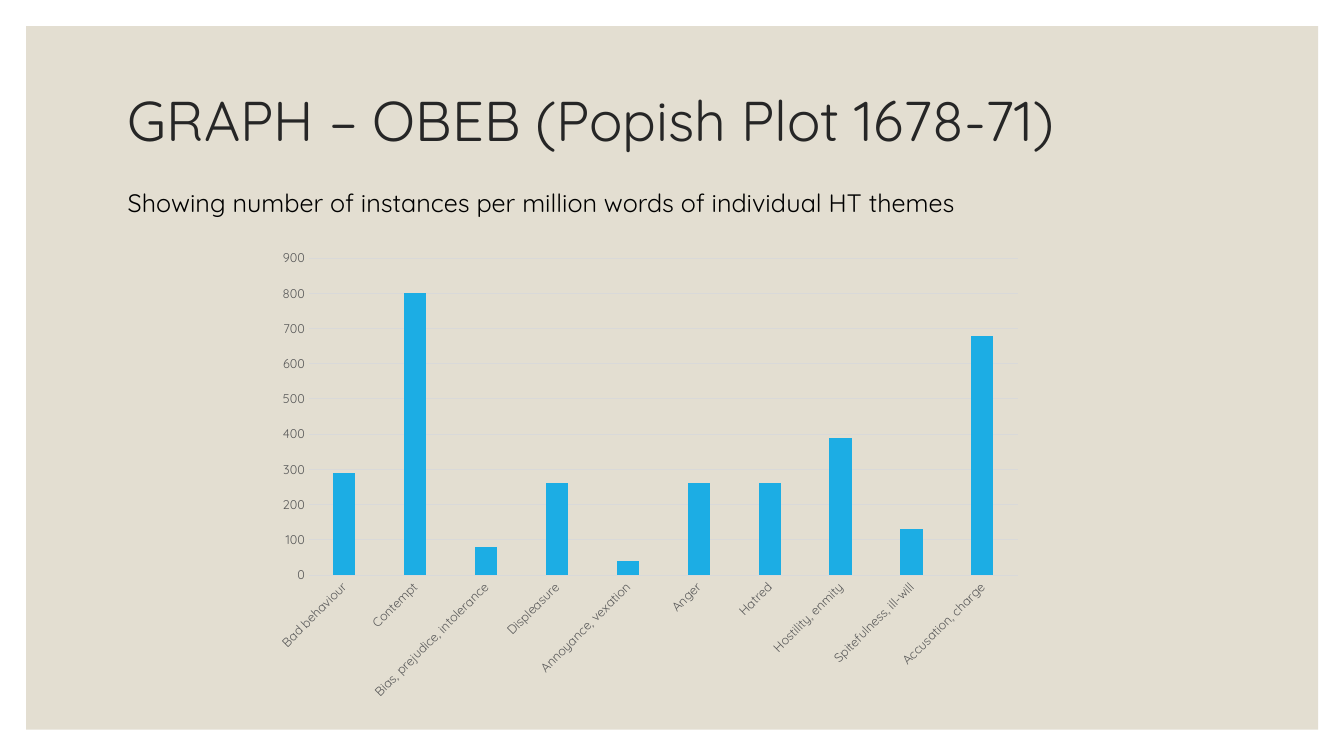
"""Build a slide charting theme counts for the Popish Plot."""
from dataclasses import dataclass

from pptx import Presentation
from pptx.chart.data import CategoryChartData
from pptx.dml.color import RGBColor
from pptx.enum.chart import XL_CHART_TYPE, XL_TICK_MARK
from pptx.enum.shapes import MSO_SHAPE
from pptx.enum.text import MSO_ANCHOR
from pptx.util import Cm, Pt

COLUMN = XL_CHART_TYPE.COLUMN_CLUSTERED
NO_TICK = XL_TICK_MARK.NONE
RECT = MSO_SHAPE.RECTANGLE
TOP, MIDDLE = MSO_ANCHOR.TOP, MSO_ANCHOR.MIDDLE
FACE = "Quicksand"
SAND, SKY, GRID, GREY = "E3DED1", "1CADE4", "D9D9D9", "595959"


@dataclass(frozen=True)
class Box:
    left: float
    top: float
    width: float
    height: float

    def lengths(self) -> tuple:
        return Cm(self.left), Cm(self.top), Cm(self.width), Cm(self.height)


@dataclass(frozen=True)
class Label:
    text: str
    box: Box
    size: int
    color: str
    anchor: MSO_ANCHOR
    spacing: float


PANEL = Box(0.66, 0.66, 32.56, 17.73)
PLOT = Box(6.63, 6.07, 19.41, 11.79)
LABELS = [
    Label("GRAPH – OBEB (Popish Plot 1678-71)",
          Box(2.97, 1.78, 27.94, 2.67), 40, "262626", MIDDLE, 0.9),
    Label("Showing number of instances per million words of individual HT themes",
          Box(2.97, 4.6, 28.47, 1.02), 18, "000000", TOP, 1.0),
]
THEMES = {
    "Bad behaviour": 290,
    "Contempt": 800,
    "Bias, prejudice, intolerance": 80,
    "Displeasure": 260,
    "Annoyance, vexation": 40,
    "Anger": 260,
    "Hatred": 260,
    "Hostility, enmity": 390,
    "Spitefulness, ill-will": 130,
    "Accusation, charge": 680,
}


def rgb(code: str) -> RGBColor:
    return RGBColor.from_string(code)


def apply(target, values: dict) -> None:
    for name, value in values.items():
        setattr(target, name, value)


def style(font, size: int, color: str) -> None:
    apply(font, {"name": FACE, "size": Pt(size), "bold": False})
    font.color.rgb = rgb(color)


def rule(line) -> None:
    line.color.rgb = rgb(GRID)
    line.width = Pt(0.75)


def draw_panel(slide, box: Box) -> None:
    panel = slide.shapes.add_shape(RECT, *box.lengths())
    panel.shadow.inherit = False
    panel.fill.solid()
    panel.fill.fore_color.rgb = rgb(SAND)
    panel.line.fill.background()


def draw_label(slide, label: Label) -> None:
    frame = slide.shapes.add_textbox(*label.box.lengths()).text_frame
    apply(frame, {"word_wrap": True, "vertical_anchor": label.anchor})
    para = frame.paragraphs[0]
    para.line_spacing = label.spacing
    run = para.add_run()
    run.text = label.text
    style(run.font, label.size, label.color)


def draw_chart(slide, box: Box) -> None:
    data = CategoryChartData()
    data.categories = list(THEMES)
    data.add_series("Series 1", list(THEMES.values()))
    chart = slide.shapes.add_chart(COLUMN, *box.lengths(), data).chart
    apply(chart, {"has_legend": False, "has_title": False})
    style(chart.font, 10, "000000")

    plot = chart.plots[0]
    apply(plot, {"gap_width": 219, "overlap": -27, "vary_by_categories": False})
    fill = plot.series[0].format.fill
    fill.solid()
    fill.fore_color.rgb = rgb(SKY)

    base, scale = chart.category_axis, chart.value_axis
    for axis in (base, scale):
        apply(axis, {"major_tick_mark": NO_TICK, "minor_tick_mark": NO_TICK})
        style(axis.tick_labels.font, 9, GREY)
    base.has_major_gridlines = False
    rule(base.format.line)
    base._element.txPr.bodyPr.set("rot", "-2700000")
    apply(scale, {"minimum_scale": 0, "maximum_scale": 900, "major_unit": 100})
    scale.format.line.fill.background()
    rule(scale.major_gridlines.format.line)


def main() -> None:
    deck = Presentation()
    apply(deck, {"slide_width": Cm(33.87), "slide_height": Cm(19.05)})
    slide = deck.slides.add_slide(deck.slide_layouts[6])
    draw_panel(slide, PANEL)
    for label in LABELS:
        draw_label(slide, label)
    draw_chart(slide, PLOT)
    deck.save("out.pptx")


if __name__ == "__main__":
    main()
